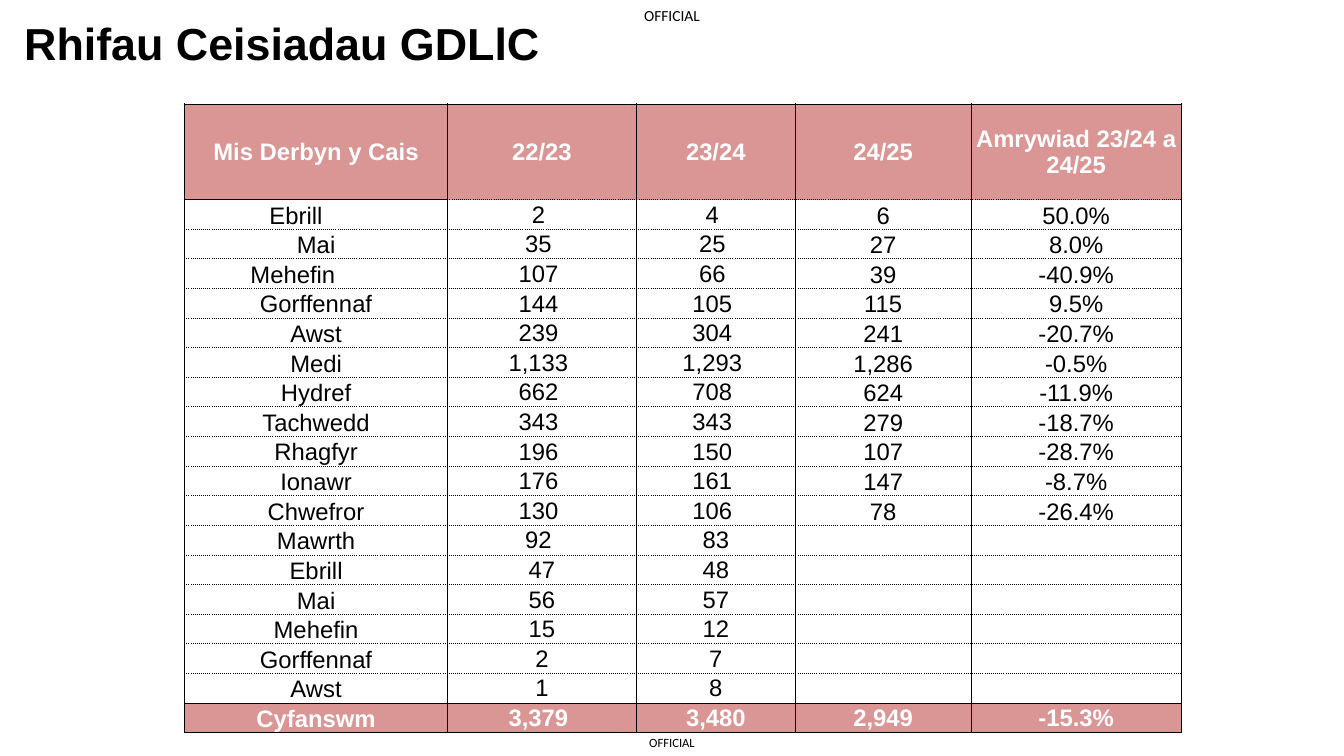
from dataclasses import dataclass
from typing import NamedTuple

from lxml.etree import SubElement
from pptx import Presentation
from pptx.dml.color import RGBColor
from pptx.enum.text import MSO_ANCHOR as Anchor, PP_ALIGN as Align
from pptx.oxml.ns import qn
from pptx.util import Inches, Length, Pt


@dataclass(frozen=True)
class Theme:
    ink: str = "000000"
    paper: str = "FFFFFF"
    band: str = "D99694"
    font: str = "Arial"
    label_font: str = "Calibri"
    title_size: int = 32
    table_size: int = 17
    rule_width: float = 0.5


class Area(NamedTuple):
    """A rectangle in percent of the slide's width and height."""
    left: float
    top: float
    width: float
    height: float


class Label(NamedTuple):
    text: str
    area: Area
    size: int


class Row(NamedTuple):
    month: str
    year_22: str
    year_23: str
    year_24: str = ""
    change: str = ""


THEME = Theme()
WIDTH, HEIGHT = Inches(13.33), Inches(7.5)

TITLE_AREA = Area(1.05, 1.47, 59.71, 15.73)
LABELS = [
    Label("OFFICIAL", Area(47.26, 96.4, 5.48, 3.6), 9),
    Label("OFFICIAL", Area(46.74, 0, 6.53, 4.13), 11),
]
TABLE_AREA = Area(13.73, 13.73, 74.19, 83.2)
COLUMN_WIDTHS = [19.58, 14.03, 11.85, 13.05, 15.68]
HEADER_HEIGHT = 12.67

ROWS = [
    Row("Mis Derbyn y Cais", "22/23", "23/24", "24/25", "Amrywiad 23/24 a 24/25"),
    Row("Ebrill", "2", "4", "6", "50.0%"),
    Row("Mai", "35", "25", "27", "8.0%"),
    Row("Mehefin", "107", "66", "39", "-40.9%"),
    Row("Gorffennaf", "144", "105", "115", "9.5%"),
    Row("Awst", "239", "304", "241", "-20.7%"),
    Row("Medi", "1,133", "1,293", "1,286", "-0.5%"),
    Row("Hydref", "662", "708", "624", "-11.9%"),
    Row("Tachwedd", "343", "343", "279", "-18.7%"),
    Row("Rhagfyr", "196", "150", "107", "-28.7%"),
    Row("Ionawr", "176", "161", "147", "-8.7%"),
    Row("Chwefror", "130", "106", "78", "-26.4%"),
    Row("Mawrth", "92", "83"),
    Row("Ebrill", "47", "48"),
    Row("Mai", "56", "57"),
    Row("Mehefin", "15", "12"),
    Row("Gorffennaf", "2", "7"),
    Row("Awst", "1", "8"),
    Row("Cyfanswm", "3,379", "3,480", "2,949", "-15.3%"),
]
TOTAL = len(ROWS) - 1

# Extra right margin, in inches, of the cells that sit left of centre
INDENTS = {(1, 0): 0.4, (3, 0): 0.46, (TOTAL, 1): 0.07}
INDENTS |= {(row, 1): 0.07 for row in range(1, 13)}
INDENTS |= {(row, 2): 0.07 for row in range(1, 12)}


def across(share: float) -> Length:
    return Length(round(WIDTH * share / 100))


def down(share: float) -> Length:
    return Length(round(HEIGHT * share / 100))


def place(area: Area) -> tuple[Length, Length, Length, Length]:
    return across(area.left), down(area.top), across(area.width), down(area.height)


def style(para, size: float, font: str, color: str, bold: bool, align) -> None:
    para.alignment = align
    para.font.size = Pt(size)
    para.font.name = font
    para.font.bold = bold
    para.font.color.rgb = RGBColor.from_string(color)


def add_title(page, text: str) -> None:
    title = page.shapes.title
    title.left, title.top, title.width, title.height = place(TITLE_AREA)
    title.text_frame.text = text
    title.text_frame.vertical_anchor = Anchor.TOP
    style(title.text_frame.paragraphs[0], THEME.title_size, THEME.font,
          THEME.ink, True, Align.LEFT)


def add_label(page, label: Label) -> None:
    frame = page.shapes.add_textbox(*place(label.area)).text_frame
    frame.margin_left = frame.margin_right = frame.margin_top = frame.margin_bottom = 0
    frame.word_wrap = True
    frame.vertical_anchor = Anchor.MIDDLE
    frame.text = label.text
    style(frame.paragraphs[0], label.size, THEME.label_font, THEME.ink, False, Align.CENTER)


def is_dotted(edge: int, column: int) -> bool:
    """Tell whether the horizontal rule above row number `edge` is dotted."""
    return 1 < edge < TOTAL or (edge == 1 and column > 0)


def add_borders(cell, row: int, column: int) -> None:
    dotted = {"a:lnL": False, "a:lnR": False,
              "a:lnT": is_dotted(row, column), "a:lnB": is_dotted(row + 1, column)}
    properties = cell._tc.get_or_add_tcPr()
    for side, is_dot in dotted.items():
        line = SubElement(properties, qn(side), w=str(Pt(THEME.rule_width)))
        SubElement(SubElement(line, qn("a:solidFill")), qn("a:srgbClr"), val=THEME.ink)
        SubElement(line, qn("a:prstDash"), val="sysDot" if is_dot else "solid")


def fill_cell(cell, text: str, row: int, column: int) -> None:
    banded = row in (0, TOTAL)
    at_bottom = (column == 0 and row > 0) or (column > 2 and not banded)
    cell.vertical_anchor = Anchor.BOTTOM if at_bottom else Anchor.MIDDLE
    cell.margin_left = cell.margin_top = Inches(0.01)
    cell.margin_right = Inches(0.01 + INDENTS.get((row, column), 0))
    cell.margin_bottom = 0
    add_borders(cell, row, column)
    if banded:
        cell.fill.solid()
        cell.fill.fore_color.rgb = RGBColor.from_string(THEME.band)
    else:
        cell.fill.background()
    para = cell.text_frame.paragraphs[0]
    if text:
        para.text = text
    else:
        SubElement(para._p, qn("a:endParaRPr"), sz=str(THEME.table_size * 100))
    style(para, THEME.table_size, THEME.font, THEME.paper if banded else THEME.ink,
          banded, Align.CENTER)


def add_applications_table(page) -> None:
    table = page.shapes.add_table(len(ROWS), len(COLUMN_WIDTHS), *place(TABLE_AREA)).table
    table.first_row = table.horz_banding = False
    for column, width in zip(table.columns, COLUMN_WIDTHS):
        column.width = across(width)
    body_height = (TABLE_AREA.height - HEADER_HEIGHT) / TOTAL
    for number, row in enumerate(ROWS):
        table.rows[number].height = down(body_height if number else HEADER_HEIGHT)
        for column, text in enumerate(row):
            fill_cell(table.cell(number, column), text, number, column)


def main() -> None:
    deck = Presentation()
    deck.slide_width, deck.slide_height = WIDTH, HEIGHT
    page = deck.slides.add_slide(deck.slide_layouts[5])

    # Classification marks at the page edges
    for label in LABELS:
        add_label(page, label)

    # Heading and monthly figures
    add_title(page, "Rhifau Ceisiadau GDLlC")
    add_applications_table(page)

    deck.save("out.pptx")


if __name__ == "__main__":
    main()
